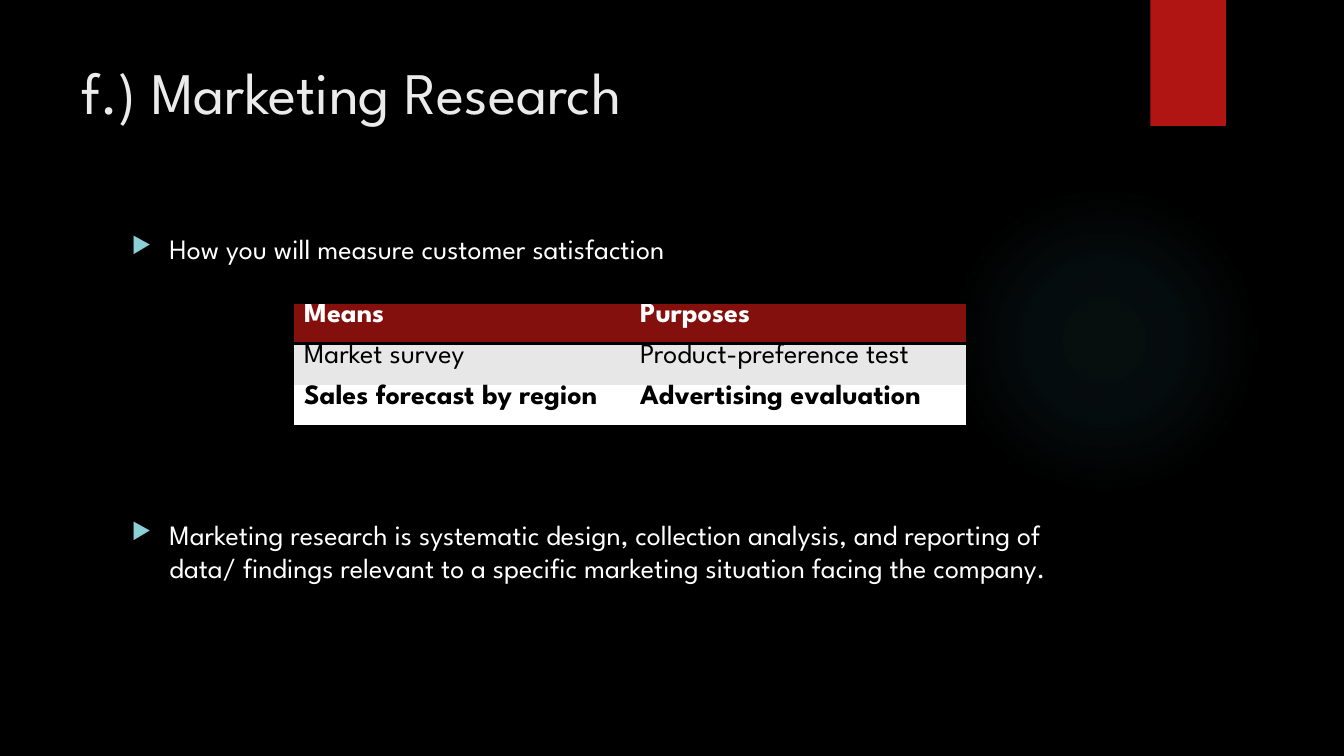
"""Build the Marketing Research slide with two points and a table."""
from dataclasses import dataclass

from lxml import etree
from pptx import Presentation
from pptx.dml.color import RGBColor
from pptx.enum import shapes, text
from pptx.oxml import ns, parse_xml
from pptx.util import Pt

TITLE = "f.) Marketing Research"
POINTS = [
    ("How you will measure customer satisfaction", 0),
    ("Marketing research is systematic design, collection analysis, and reporting of "
     "data/ findings relevant to a specific marketing situation facing the company.", 180),
]
ROWS = [
    ("Means", "Purposes"),
    ("Market survey", "Product-preference test"),
    ("Sales forecast by region", "Advertising evaluation"),
]


@dataclass(frozen=True)
class Theme:
    font: str = "League Spartan"
    title_size: int = 42
    text_size: int = 20
    back: str = "000000"
    title: str = "EBEBEB"
    light: str = "FFFFFF"
    dark: str = "000000"
    ribbon: str = "B01513"
    bullet: str = "8AD0D6"
    glow: str = "50B9C1"
    glow_stops: tuple = ((0, 7), (36, 6), (69, 0))


THEME = Theme()
ROW_STYLES = [
    {"fill": "84100E", "color": THEME.light, "bold": True, "edges": ("lnT", "lnB")},
    {"fill": "E7E7E7", "color": THEME.dark, "bold": False, "edges": ()},
    {"fill": "FFFFFF", "color": THEME.dark, "bold": True, "edges": ("lnB",)},
]
PLAIN_TABLE = "{2D5ABB26-0587-4C30-8999-92F81FD0307C}"


def rgb(value):
    return RGBColor.from_string(value)


def add_span(para, words, size, color, bold=False):
    span = para.add_run()
    span.text = words
    span.font.name = THEME.font
    span.font.size = Pt(size)
    span.font.bold = bold
    span.font.color.rgb = rgb(color)


def place(shape, left, top, width, height):
    shape.left, shape.top, shape.width, shape.height = map(Pt, (left, top, width, height))


def add_plain_shape(page, kind, *frame):
    shape = page.shapes.add_shape(kind, *map(Pt, frame))
    shape.shadow.inherit = False
    shape.line.fill.background()
    return shape


def add_glow(page):
    glow = add_plain_shape(page, shapes.MSO_SHAPE.OVAL, 677.5, 131.8, 221.8, 221.8)
    stops = "".join(
        f'<a:gs pos="{position * 1000}"><a:srgbClr val="{THEME.glow}">'
        f'<a:alpha val="{alpha * 1000}"/></a:srgbClr></a:gs>'
        for position, alpha in THEME.glow_stops
    )
    gradient = parse_xml(
        f'<a:gradFill {ns.nsdecls("a")}><a:gsLst>{stops}</a:gsLst><a:path path="circle">'
        '<a:fillToRect l="50000" t="50000" r="50000" b="50000"/></a:path></a:gradFill>'
    )
    glow.element.spPr.find(ns.qn("a:prstGeom")).addnext(gradient)


def add_title(page):
    title = page.shapes.title
    place(title, 51, 36, 741, 110)
    title.text_frame.vertical_anchor = text.MSO_ANCHOR.TOP
    title.text_frame.word_wrap = True
    para = title.text_frame.paragraphs[0]
    para.alignment = text.PP_ALIGN.LEFT
    add_span(para, TITLE, THEME.title_size, THEME.title)


def add_bullet(para, indent=27):
    props = para._p.get_or_add_pPr()
    props.set("marL", str(Pt(indent)))
    props.set("indent", str(-Pt(indent)))
    color = etree.SubElement(props, ns.qn("a:buClr"))
    etree.SubElement(color, ns.qn("a:srgbClr"), val=THEME.bullet)
    etree.SubElement(props, ns.qn("a:buSzPct"), val="80000")
    etree.SubElement(props, ns.qn("a:buChar"), char="▶")


def add_points(page):
    box = page.shapes.add_textbox(Pt(87), Pt(162), Pt(704), Pt(330))
    frame = box.text_frame
    frame.word_wrap = True
    for index, (words, gap) in enumerate(POINTS):
        para = frame.add_paragraph() if index else frame.paragraphs[0]
        add_bullet(para)
        para.space_before = Pt(gap)
        add_span(para, words, THEME.text_size, THEME.light)


def add_edges(cell, edges):
    props = cell._tc.get_or_add_tcPr()
    for index, edge in enumerate(edges):
        line = parse_xml(
            f'<a:{edge} {ns.nsdecls("a")} w="{Pt(2)}"><a:solidFill>'
            f'<a:srgbClr val="{THEME.dark}"/></a:solidFill></a:{edge}>'
        )
        props.insert(index, line)


def add_research_table(page, row_height=29.5):
    holder = page.shapes.add_table(
        len(ROWS), len(ROWS[0]), Pt(210), Pt(216), Pt(480), Pt(row_height * len(ROWS))
    )
    table = holder.table
    table._tbl.tblPr.find(ns.qn("a:tableStyleId")).text = PLAIN_TABLE
    table.horz_banding = False
    for row, words, style in zip(table.rows, ROWS, ROW_STYLES):
        row.height = Pt(row_height)
        for cell, label in zip(row.cells, words):
            cell.margin_top = cell.margin_bottom = 0
            cell.fill.solid()
            cell.fill.fore_color.rgb = rgb(style["fill"])
            add_edges(cell, style["edges"])
            para = cell.text_frame.paragraphs[0]
            add_span(para, label, THEME.text_size, style["color"], style["bold"])


def main():
    deck = Presentation()
    deck.slide_width, deck.slide_height = Pt(960), Pt(540)
    page = deck.slides.add_slide(deck.slide_layouts.get_by_name("Title Only"))
    page.background.fill.solid()
    page.background.fill.fore_color.rgb = rgb(THEME.back)
    add_glow(page)
    ribbon = add_plain_shape(page, shapes.MSO_SHAPE.RECTANGLE, 821.7, 0, 54, 90)
    ribbon.fill.solid()
    ribbon.fill.fore_color.rgb = rgb(THEME.ribbon)
    add_title(page)
    add_points(page)
    add_research_table(page)
    deck.save("out.pptx")


if __name__ == "__main__":
    main()
